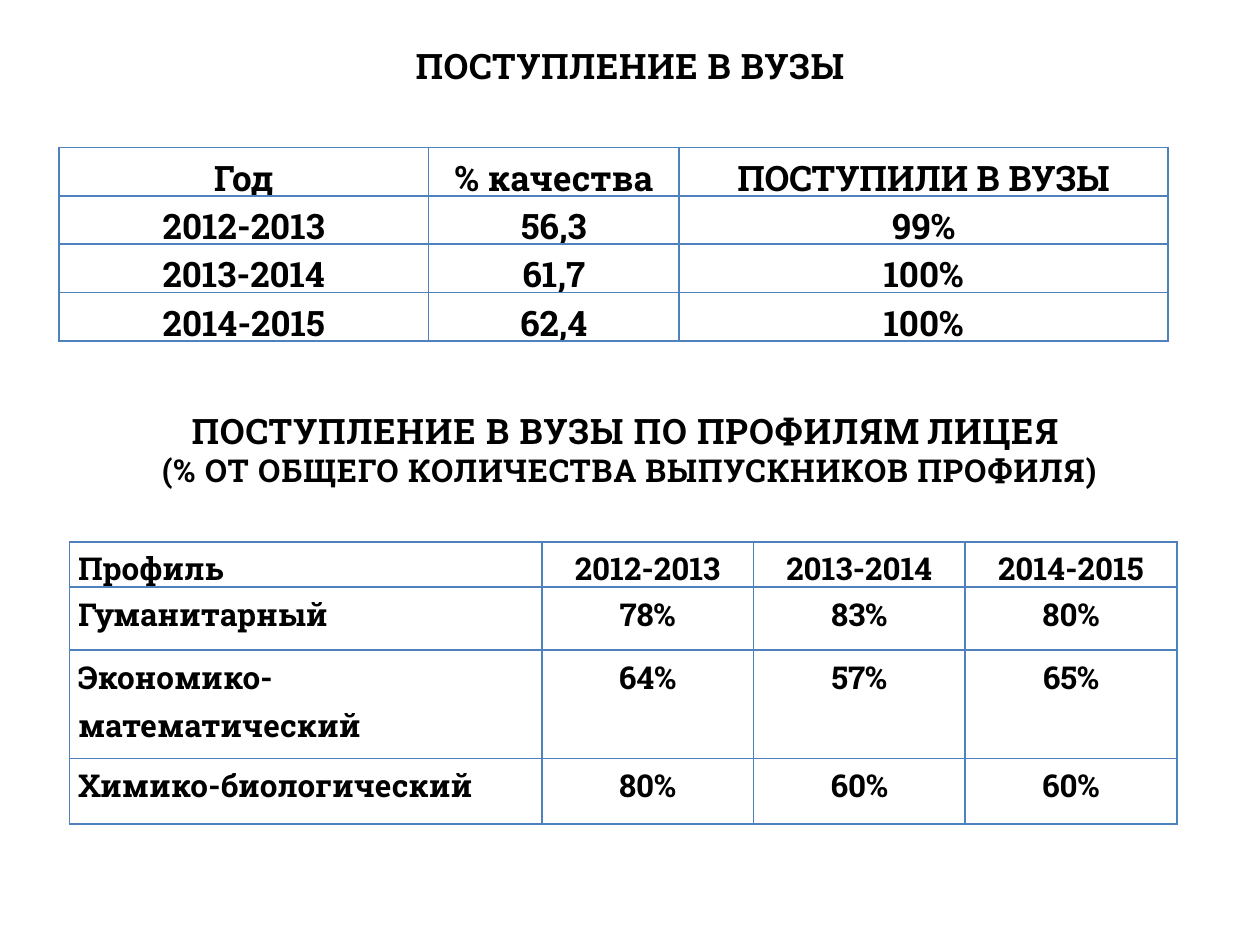
from lxml.etree import SubElement
from pptx import Presentation
from pptx.dml.color import RGBColor
from pptx.enum.text import MSO_ANCHOR as ANCHOR, MSO_AUTO_SIZE as AUTO, PP_ALIGN as ALIGN
from pptx.oxml import parse_xml
from pptx.oxml.ns import nsdecls, qn
from pptx.util import Inches, Pt

FONT = "Roboto Slab"
BLACK = RGBColor(0x00, 0x00, 0x00)
BLUE = RGBColor(0x4F, 0x81, 0xBD)

ADMISSIONS = [
    ["Год", "% качества", "ПОСТУПИЛИ В ВУЗЫ"],
    ["2012-2013", "56,3", "99%"],
    ["2013-2014", "61,7", "100%"],
    ["2014-2015", "62,4", "100%"],
]
PROFILES = [
    ["Профиль", "2012-2013", "2013-2014", "2014-2015"],
    ["Гуманитарный", "78%", "83%", "80%"],
    ["Экономико-математический", "64%", "57%", "65%"],
    ["Химико-биологический", "80%", "60%", "60%"],
]


def write(p, text, size, align=ALIGN.CENTER, spacing=None):
    """Put one formatted run into paragraph p; spacing is in points."""
    p.alignment = align
    r = p.add_run()
    r.text = text
    fmt = {"name": FONT, "size": Pt(size), "bold": True}
    for key, value in fmt.items():
        setattr(r.font, key, value)
    r.font.color.rgb = BLACK
    if spacing:
        r._r.get_or_add_rPr().set("spc", str(round(spacing * 100)))


def fill_heading(sp, box, lines, anchor):
    """Place a heading shape and write its (text, size, spacing) lines."""
    sp.left, sp.top, sp.width, sp.height = (Inches(v) for v in box)
    tf = sp.text_frame
    fmt = {
        "word_wrap": True, "auto_size": AUTO.SHAPE_TO_FIT_TEXT,
        "vertical_anchor": anchor,
        "margin_left": Inches(0.1), "margin_right": Inches(0.1),
        "margin_top": Inches(0.05), "margin_bottom": Inches(0.05),
    }
    for key, value in fmt.items():
        setattr(tf, key, value)
    for i, (text, size, spacing) in enumerate(lines):
        p = tf.add_paragraph() if i else tf.paragraphs[0]
        write(p, text, size, spacing=spacing)


def set_borders(cell):
    """Give all four sides of a cell a thin blue line."""
    tcPr = cell._tc.get_or_add_tcPr()
    for i, side in enumerate(("lnL", "lnR", "lnT", "lnB")):
        ln = parse_xml(f'<a:{side} {nsdecls("a")} w="{Pt(1)}"/>')
        fill = SubElement(ln, qn("a:solidFill"))
        SubElement(fill, qn("a:srgbClr")).set("val", str(BLUE))
        tcPr.insert(i, ln)


def add_grid(slide, box, data, cols, rows, size, first_align, body_anchor):
    """Add a plain bordered table; first_align is for the first column."""
    frame = slide.shapes.add_table(len(rows), len(cols), *(Inches(v) for v in box))
    table = frame.table
    table.first_row = table.horz_banding = False
    for col, width in zip(table.columns, cols):
        col.width = Inches(width)
    for row, height in zip(table.rows, rows):
        row.height = Inches(height)

    for i, values in enumerate(data):
        for j, text in enumerate(values):
            cell = table.cell(i, j)
            fmt = {
                "margin_left": Inches(0.07), "margin_right": Inches(0.07),
                "margin_top": 0, "margin_bottom": 0,
                "vertical_anchor": body_anchor if i else ANCHOR.TOP,
            }
            for key, value in fmt.items():
                setattr(cell, key, value)
            cell.fill.background()
            set_borders(cell)
            p = cell.text_frame.paragraphs[0]
            p.line_spacing = 1.15
            write(p, text, size, ALIGN.CENTER if j else first_align)


def build_slide(prs):
    slide = prs.slides.add_slide(prs.slide_layouts[5])

    # Admissions by year
    fill_heading(slide.shapes.title, (0, 0.31, 10, 0.42),
                 [("ПОСТУПЛЕНИЕ В ВУЗЫ", 20, 0.4)], ANCHOR.MIDDLE)
    add_grid(slide, (0.47, 1.17, 8.8, 1.53), ADMISSIONS,
             [2.93, 1.99, 3.88], [0.38] * 4, 20, ALIGN.CENTER, ANCHOR.MIDDLE)

    # Admissions by study profile
    box = (0, 3.2, 10, 0.73)
    sp = slide.shapes.add_textbox(*(Inches(v) for v in box))
    fill_heading(sp, box, [
        ("ПОСТУПЛЕНИЕ В ВУЗЫ ПО ПРОФИЛЯМ ЛИЦЕЯ ", 20, 0.5),
        ("(% ОТ ОБЩЕГО КОЛИЧЕСТВА ВЫПУСКНИКОВ ПРОФИЛЯ)", 18, 0.5),
    ], ANCHOR.TOP)
    add_grid(slide, (0.55, 4.3, 8.8, 2.24), PROFILES,
             [3.75] + [1.68] * 3, [0.36, 0.5, 0.86, 0.52], 18,
             ALIGN.JUSTIFY, ANCHOR.TOP)


def main():
    prs = Presentation()
    prs.slide_width, prs.slide_height = Inches(10), Inches(7.5)
    build_slide(prs)
    prs.save("out.pptx")


if __name__ == "__main__":
    main()
